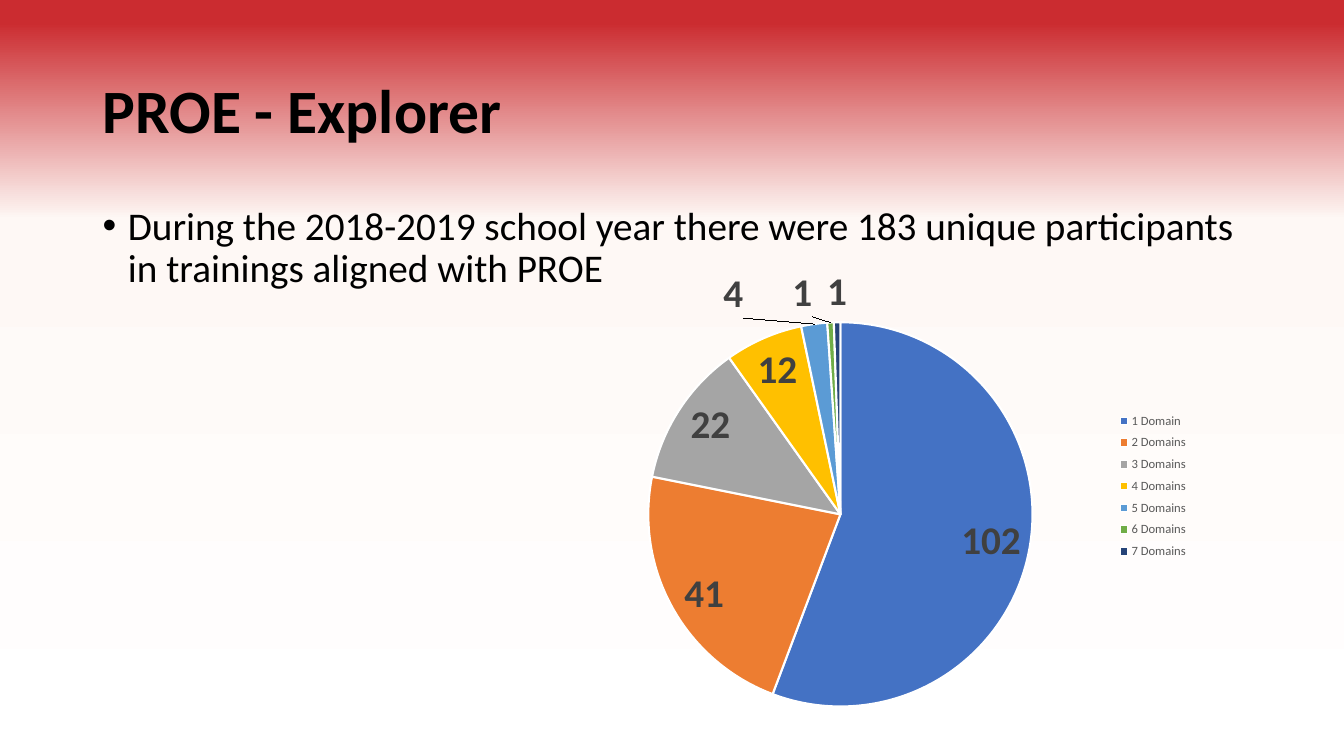
from copy import deepcopy

from lxml import etree
from pptx import Presentation
from pptx.chart.data import CategoryChartData
from pptx.dml.color import RGBColor
from pptx.enum.chart import XL_CHART_TYPE, XL_LABEL_POSITION, XL_LEGEND_POSITION
from pptx.enum.text import MSO_ANCHOR, PP_ALIGN
from pptx.oxml.ns import qn
from pptx.util import Cm, Pt

PIE = XL_CHART_TYPE.PIE
BEST_FIT = XL_LABEL_POSITION.BEST_FIT
LEGEND_RIGHT = XL_LEGEND_POSITION.RIGHT
MIDDLE, TOP = MSO_ANCHOR.MIDDLE, MSO_ANCHOR.TOP
LEFT = PP_ALIGN.LEFT

FONT = "Calibri"
BACKGROUND_STOPS = [(0.03, "CB2C30"), (0.29, "FEF8F5"), (1, "FFFFFF")]
SLICES = [
    ("1 Domain", 102, "4472C4"),
    ("2 Domains", 41, "ED7D31"),
    ("3 Domains", 22, "A5A5A5"),
    ("4 Domains", 12, "FFC000"),
    ("5 Domains", 4, "5B9BD5"),
    ("6 Domains", 1, "70AD47"),
    ("7 Domains", 1, "264478"),
]
LABEL_SHIFTS = {4: (-0.1, 0), 5: (-0.04, 0)}


def rgb(color):
    return RGBColor.from_string(color)


def set_font(font, size, color, bold=False):
    font.name, font.size, font.bold = FONT, Pt(size), bold
    font.color.rgb = rgb(color)


def fill_background(s):
    fill = s.background.fill
    fill.gradient()
    fill.gradient_angle = 270
    stop_list = s.element.find(".//" + qn("a:gsLst"))
    stop_list.append(deepcopy(stop_list[-1]))
    for stop, (position, color) in zip(fill.gradient_stops, BACKGROUND_STOPS):
        stop.position = position
        stop.color.rgb = rgb(color)


def place_text(sp, text, box, size, anchor, bold=False):
    sp.left, sp.top, sp.width, sp.height = box
    tf = sp.text_frame
    tf.text = text
    tf.vertical_anchor = anchor
    p = tf.paragraphs[0]
    p.alignment = LEFT
    p.line_spacing = 0.9
    set_font(p.runs[0].font, size, "000000", bold)
    return p


def add_title(s, box):
    place_text(s.shapes.title, "PROE - Explorer", box, 44, MIDDLE, bold=True)


def add_body(s, box):
    text = ("During the 2018-2019 school year there were 183 unique participants "
            "in trainings aligned with PROE")
    p = place_text(s.placeholders[1], text, box, 28, TOP)
    p.space_before = Pt(10)
    pPr = p.runs[0].font._element.getparent().getparent().get_or_add_pPr()
    pPr.set("marL", str(Cm(0.64)))
    pPr.set("indent", str(Cm(-0.64)))


def make_layout(**values):
    """Return a chart layout element; values are fractions of the chart area."""
    layout = etree.Element(qn("c:layout"))
    manual = etree.SubElement(layout, qn("c:manualLayout"))
    for name, value in values.items():
        etree.SubElement(manual, qn("c:" + name), val=str(value))
    return layout


def set_layout(parent, layout, after=None):
    """Replace the layout of a chart part, placing it after the named child."""
    for old in parent.findall(qn("c:layout")):
        parent.remove(old)
    if after is None:
        parent.insert(0, layout)
    else:
        parent.find(qn(after)).addnext(layout)


def label_slices(series):
    labels = series.data_labels
    labels.show_value = True
    labels.position = BEST_FIT
    set_font(labels.font, 28, "404040", bold=True)
    for i, (x, y) in LABEL_SHIFTS.items():
        label = series.points[i].data_label
        set_font(label.font, 28, "404040", bold=True)
        label.position = BEST_FIT
    for dLbl in series._element.iter(qn("c:dLbl")):
        x, y = LABEL_SHIFTS[int(dLbl.find(qn("c:idx")).get("val"))]
        set_layout(dLbl, make_layout(x=x, y=y), after="c:idx")


def add_domain_pie(s, box):
    names, values, colors = zip(*SLICES)
    data = CategoryChartData()
    data.categories = names
    data.add_series("Series 1", values)
    chart = s.shapes.add_chart(PIE, *box, data).chart
    set_font(chart.font, 10, "000000")
    chart.has_title = False

    plot = chart.plots[0]
    plot.vary_by_categories = True
    series = plot.series[0]
    for i, color in enumerate(colors):
        look = series.points[i].format
        look.fill.solid()
        look.fill.fore_color.rgb = rgb(color)
        look.line.color.rgb = rgb("FFFFFF")
        look.line.width = Pt(1.5)
    label_slices(series)

    chart.has_legend = True
    legend = chart.legend
    legend.position = LEGEND_RIGHT
    legend.include_in_layout = False
    set_font(legend.font, 9, "595959")

    plot_area = chart._chartSpace.find(".//" + qn("c:plotArea"))
    set_layout(plot_area, make_layout(layoutTarget="inner", xMode="edge", yMode="edge",
                                      x=0.19, y=0.15, w=0.55, h=0.82))
    set_layout(legend._element, make_layout(xMode="edge", yMode="edge",
                                            x=0.85, y=0.33, w=0.12, h=0.34),
               after="c:legendPos")


def main():
    prs = Presentation()
    prs.slide_width, prs.slide_height = Cm(33.87), Cm(19.05)
    s = prs.slides.add_slide(prs.slide_layouts[1])
    fill_background(s)
    add_title(s, (Cm(2.33), Cm(1.01), Cm(29.21), Cm(3.68)))
    add_body(s, (Cm(2.33), Cm(5.07), Cm(29.21), Cm(12.09)))
    add_domain_pie(s, (Cm(12.95), Cm(6.35), Cm(17.7), Cm(11.81)))
    prs.save("out.pptx")


if __name__ == "__main__":
    main()
